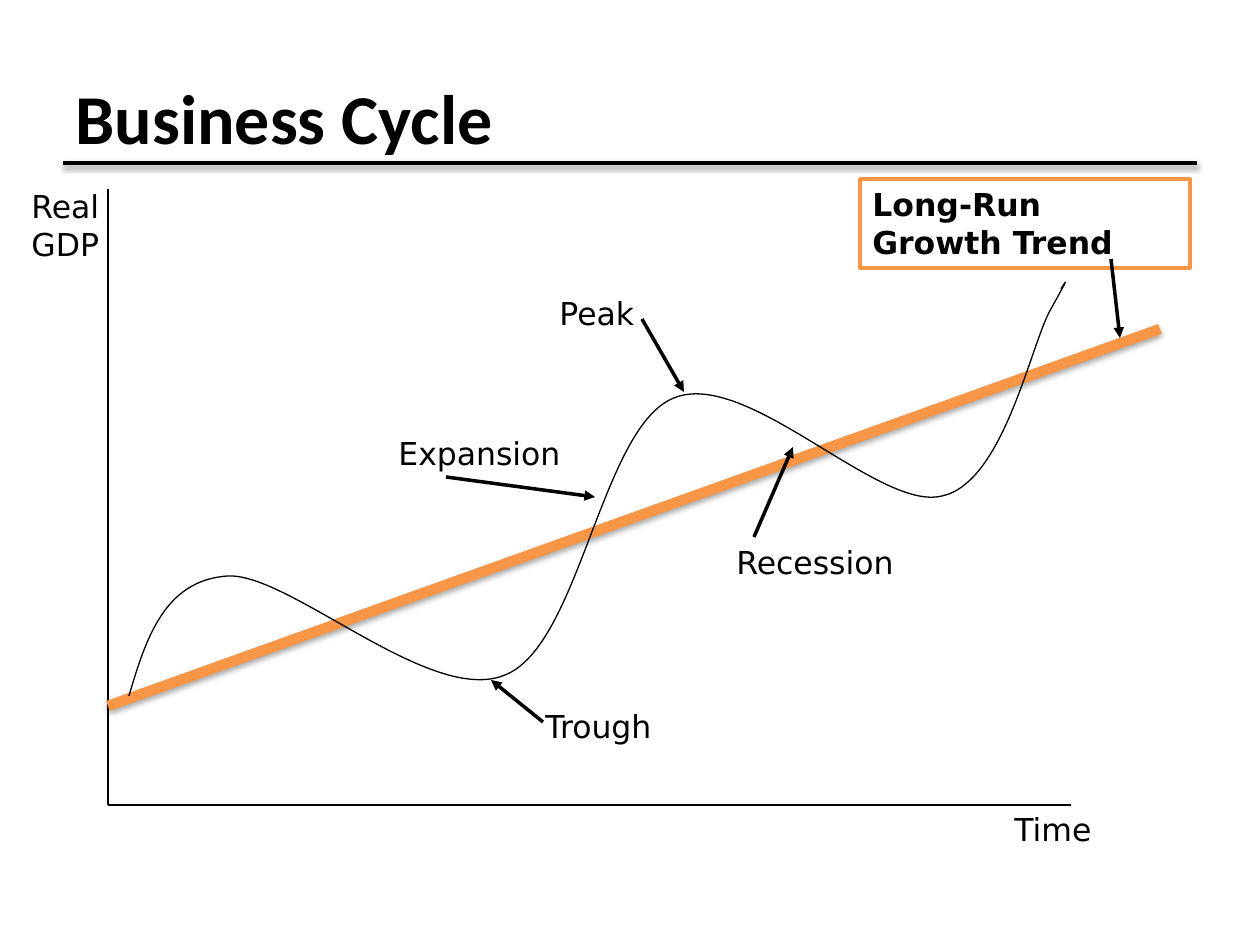
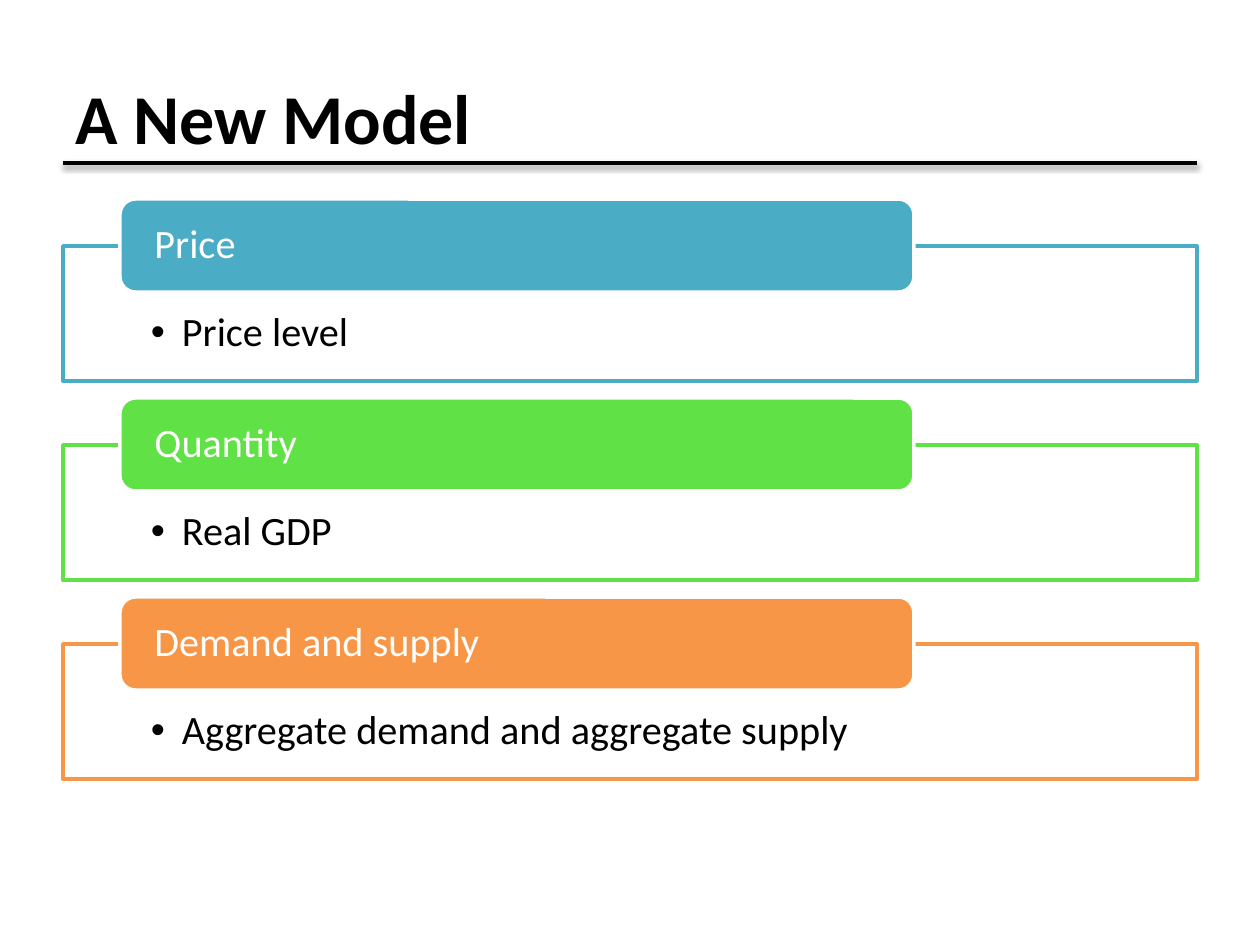
from dataclasses import dataclass

from lxml.etree import SubElement
from pptx import Presentation
from pptx.dml.color import RGBColor
from pptx.enum.shapes import MSO_CONNECTOR as Connector, MSO_SHAPE as Shape
from pptx.enum.text import MSO_ANCHOR as Anchor, PP_ALIGN as Align
from pptx.oxml.ns import qn
from pptx.util import Emu, Pt

EMU_PER_INCH, PX_PER_INCH = 914400, 126


@dataclass(frozen=True)
class Theme:
    ink: str = "000000"
    paper: str = "FFFFFF"
    teal: str = "4BACC6"
    green: str = "60E146"
    orange: str = "F79646"
    heading_font: str = "Calibri"
    label_font: str = "DejaVu Sans"
    title_size: int = 40
    panel_size: int = 23
    label_size: int = 18
    thin: float = 0.75
    medium: int = 2
    thick: int = 6


THEME = Theme()

# Places are px: left, top, width, height; lines are px: start x, y, end x, y
SLIDE_SIZE = (1260, 945)
TITLE_BOX = (63, 38, 1134, 157)
TITLE_RULE = (63, 163, 1197, 163)

CYCLE_TITLE = "Business Cycle"
AXES = [(108, 189, 108, 805), (108, 805, 1071, 805)]
TREND_LINE = (108, 706, 1160, 329)
TREND_LABEL = ("Long-Run Growth Trend", (860, 179, 330, 89))
AXIS_LABELS = [
    ("Real GDP", (19, 181, 110, 88)),
    ("Time", (1002, 804, 110, 50)),
]
PHASE_LABELS = [
    ("Recession", (724, 537, 189, 50)),
    ("Expansion", (386, 428, 198, 50)),
    ("Trough", (533, 701, 198, 50)),
    ("Peak", (547, 288, 198, 50)),
]
POINTERS = [
    (1111, 259, 1120, 338),
    (754, 537, 793, 447),
    (446, 477, 595, 497),
    (543, 722, 491, 680),
    (642, 319, 684, 392),
]
CYCLE_START = (129, 696)
CYCLE_BENDS = [  # two control points, then the end of each bend
    ((146, 638), (165, 580), (228, 576)),
    ((290, 573), (431, 706), (505, 675)),
    ((580, 646), (601, 427), (674, 398)),
    ((747, 368), (879, 512), (942, 496)),
    ((1004, 483), (1031, 343), (1051, 309)),
    ((1071, 273), (1066, 281), (1061, 289)),
]

MODEL_TITLE = "A New Model"
PANELS = [
    ("Price", "Price level", THEME.teal),
    ("Quantity", "Real GDP", THEME.green),
    ("Demand and supply", "Aggregate demand and aggregate supply", THEME.orange),
]
TAB_BOX = (120, 199, 794, 93)
FRAME_BOX = (63, 246, 1134, 135)
PANEL_PITCH = 199
TAB_INSETS = (30, 0, 30, 0)
FRAME_INSETS = (88, 66, 88, 23)
BULLET_INDENT = 31


def px(length):
    return Emu(round(length * EMU_PER_INCH / PX_PER_INCH))


def emu(lengths):
    return [px(length) for length in lengths]


def rgb(colour):
    return RGBColor.from_string(colour)


def style_line(line, colour, width):
    line.color.rgb = rgb(colour)
    line.width = Pt(width)


def style_text(frame, font, size, colour, bold=False):
    for paragraph in frame.paragraphs:
        paragraph.alignment = Align.LEFT
        for run in paragraph.runs:
            run.font.name, run.font.size, run.font.bold = font, Pt(size), bold
            run.font.color.rgb = rgb(colour)


def set_insets(frame, insets):
    (frame.margin_left, frame.margin_top,
     frame.margin_right, frame.margin_bottom) = emu(insets)


def add_line(slide, ends, width, colour=THEME.ink, arrow=False, shadow_alpha=0):
    """Draw a straight line; shadow_alpha is the shadow's opacity in percent."""
    line = slide.shapes.add_connector(Connector.STRAIGHT, *emu(ends))
    style_line(line.line, colour, width)
    properties = line.element.spPr
    if arrow:
        SubElement(properties.find(qn("a:ln")), qn("a:tailEnd"), type="triangle")
    effects = SubElement(properties, qn("a:effectLst"))
    if shadow_alpha:
        shadow = SubElement(effects, qn("a:outerShdw"), blurRad=str(Pt(3.1)),
                            dist=str(Pt(1.7)), dir="5400000", rotWithShape="0")
        tint = SubElement(shadow, qn("a:srgbClr"), val=THEME.ink)
        SubElement(tint, qn("a:alpha"), val=str(shadow_alpha * 1000))


def add_block(slide, kind, box, text, fill, outline):
    block = slide.shapes.add_shape(kind, *emu(box))
    block.shadow.inherit = False
    block.fill.solid()
    block.fill.fore_color.rgb = rgb(fill)
    style_line(block.line, outline, THEME.medium)
    block.text_frame.word_wrap = True
    block.text_frame.text = text
    return block.text_frame


def add_label(slide, text, box):
    frame = slide.shapes.add_textbox(*emu(box)).text_frame
    frame.word_wrap = True
    frame.text = text
    style_text(frame, THEME.label_font, THEME.label_size, THEME.ink)


def add_titled_slide(deck, title):
    slide = deck.slides.add_slide(deck.slide_layouts[5])
    heading = slide.shapes.title
    heading.left, heading.top, heading.width, heading.height = emu(TITLE_BOX)
    frame = heading.text_frame
    frame.text = title
    frame.vertical_anchor = Anchor.MIDDLE
    style_text(frame, THEME.heading_font, THEME.title_size, THEME.ink, bold=True)
    add_line(slide, TITLE_RULE, THEME.medium, shadow_alpha=38)
    return slide


def add_cycle(slide):
    """Lay the bends out as line segments, then merge each three into a curve."""
    builder = slide.shapes.build_freeform(*emu(CYCLE_START))
    builder.add_line_segments(
        [tuple(emu(point)) for bend in CYCLE_BENDS for point in bend], close=False)
    cycle = builder.convert_to_shape()
    cycle.shadow.inherit = False
    cycle.fill.background()
    style_line(cycle.line, THEME.ink, THEME.thin)
    segments = list(cycle.element.iter(qn("a:lnTo")))
    for first, *others in zip(segments[::3], segments[1::3], segments[2::3]):
        first.tag = qn("a:cubicBezTo")
        for segment in others:
            first.append(segment[0])
            segment.getparent().remove(segment)


def build_cycle_slide(deck):
    slide = add_titled_slide(deck, CYCLE_TITLE)
    for axis in AXES:
        add_line(slide, axis, THEME.thin)
    for text, box in AXIS_LABELS:
        add_label(slide, text, box)
    add_line(slide, TREND_LINE, THEME.thick, THEME.orange, shadow_alpha=35)
    add_cycle(slide)
    text, box = TREND_LABEL
    trend = add_block(slide, Shape.RECTANGLE, box, text, THEME.paper, THEME.orange)
    trend.vertical_anchor = Anchor.TOP
    style_text(trend, THEME.label_font, THEME.label_size, THEME.ink, bold=True)
    for text, box in PHASE_LABELS:
        add_label(slide, text, box)
    for pointer in POINTERS:
        add_line(slide, pointer, THEME.medium, arrow=True)


def add_bullet(paragraph):
    properties = paragraph._p.get_or_add_pPr()
    properties.set("marL", str(px(BULLET_INDENT)))
    properties.set("indent", str(-px(BULLET_INDENT)))
    SubElement(properties, qn("a:buFont"), typeface="Arial")
    SubElement(properties, qn("a:buChar"), char="•")


def add_panel(slide, offset, heading, detail, colour):
    def lowered(box):
        left, top, width, height = box
        return left, top + offset, width, height

    frame = add_block(slide, Shape.RECTANGLE, lowered(FRAME_BOX), detail,
                      THEME.paper, colour)
    frame.vertical_anchor = Anchor.TOP
    set_insets(frame, FRAME_INSETS)
    add_bullet(frame.paragraphs[0])
    tab = add_block(slide, Shape.ROUNDED_RECTANGLE, lowered(TAB_BOX), heading,
                    colour, THEME.paper)
    tab.vertical_anchor = Anchor.MIDDLE
    set_insets(tab, TAB_INSETS)
    for part, ink in ((frame, THEME.ink), (tab, THEME.paper)):
        style_text(part, THEME.heading_font, THEME.panel_size, ink)
        part.paragraphs[0].line_spacing = 0.9


def build_model_slide(deck):
    slide = add_titled_slide(deck, MODEL_TITLE)
    for row, panel in enumerate(PANELS):
        add_panel(slide, row * PANEL_PITCH, *panel)


def main():
    deck = Presentation()
    deck.slide_width, deck.slide_height = emu(SLIDE_SIZE)
    build_cycle_slide(deck)
    build_model_slide(deck)
    deck.save("out.pptx")


if __name__ == "__main__":
    main()
